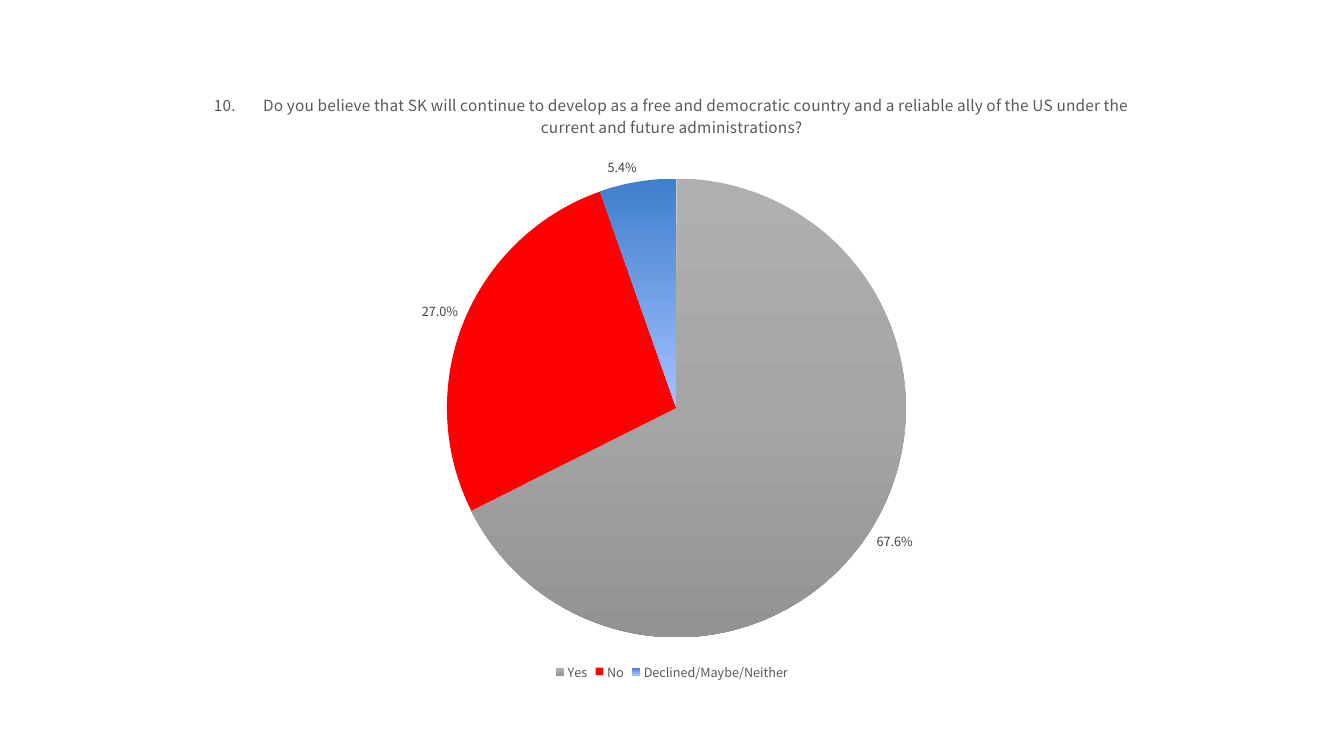
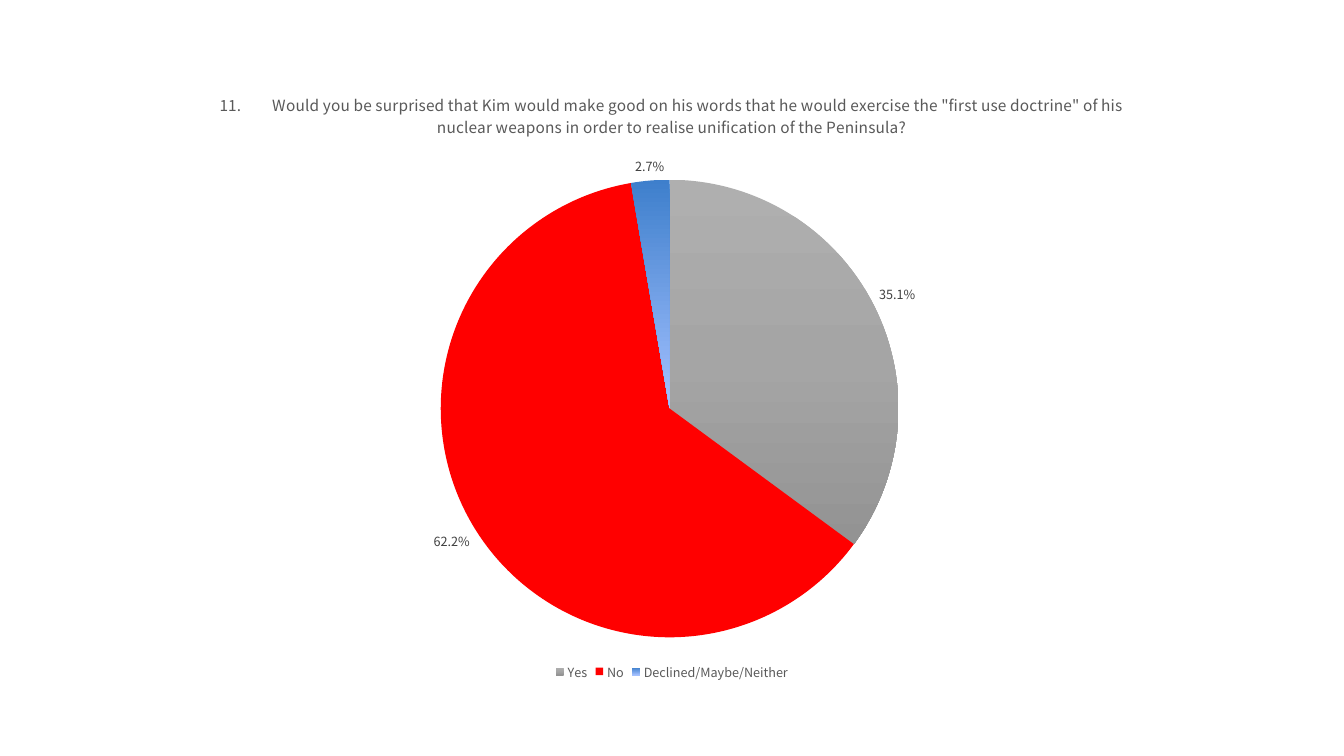
"""Build two survey slides, each with one pie chart."""
from dataclasses import dataclass

from lxml import etree
from pptx import Presentation
from pptx import util as u
from pptx.chart import data as cd
from pptx.dml.color import RGBColor
from pptx.enum import chart as ec
from pptx.oxml import ns

FONT = "Noto Sans CJK KR"
HUES = {"title": "595959", "label": "404040", "base": "000000", "no": "FF0000"}
FADES = {
    0: ("6183CB", "3E70CA", "3062BB"),
    2: ("AFAFAF", "A5A5A5", "939393"),
}
CATS = ("Yes", "No", "Declined/Maybe/Neither")


@dataclass(frozen=True)
class Poll:
    num: str
    ask: str
    gap: float
    vals: tuple[float, ...]


POLLS = (
    Poll(
        "10.",
        "Do you believe that SK will continue to develop as a free and democratic "
        "country and a reliable ally of the US under the current and future "
        "administrations?",
        17,
        (0.676, 0.27, 0.054),
    ),
    Poll(
        "11.",
        'Would you be surprised that Kim would make good on his words that he would '
        'exercise the "first use doctrine" of his nuclear weapons in order to '
        "realise unification of the Peninsula?",
        19.5,
        (0.351, 0.622, 0.027),
    ),
)


def style(font, *, size: float, hue: str) -> None:
    font.name = FONT
    font.size = u.Pt(size)
    font.bold = False
    font.color.rgb = RGBColor.from_string(HUES[hue])


def write(para, text: str, *, size: float, hue: str, track: float = 0) -> None:
    run = para.add_run()
    run.text = text
    style(run.font, size=size, hue=hue)
    if track:
        run.font._element.set("spc", str(int(track * 100)))


def fade(point, stops: tuple[str, ...]) -> None:
    fill = point.format.fill
    fill.gradient()
    fill.gradient_angle = 270
    grad = point._element.find(".//" + ns.qn("a:gradFill"))
    row = grad.find(ns.qn("a:gsLst"))
    for old in list(row):
        row.remove(old)
    for i, hue in enumerate(stops):
        stop = etree.SubElement(row, ns.qn("a:gs"), pos=str(i * 50000))
        etree.SubElement(stop, ns.qn("a:srgbClr"), val=hue)


def paint(plot) -> None:
    points = plot.series[0].points
    for i in range(len(CATS)):
        if i in FADES:
            fade(points[i], FADES[i])
        else:
            points[i].format.fill.solid()
            points[i].format.fill.fore_color.rgb = RGBColor.from_string(HUES["no"])
        points[i].format.line.fill.background()


def draw(slide, poll: Poll) -> None:
    data = cd.CategoryChartData(number_format="0.0%")
    data.categories = CATS
    data.add_series(f"{poll.num} {poll.ask}", poll.vals)
    chart = slide.shapes.add_chart(
        ec.XL_CHART_TYPE.PIE,
        u.Inches(0.7), u.Inches(0.7), u.Inches(11.93), u.Inches(6.09),
        data,
    ).chart
    style(chart.font, size=10, hue="base")

    chart.has_title = True
    chart.chart_title.include_in_layout = False
    para = chart.chart_title.text_frame.paragraphs[0]
    look = {"size": 11, "hue": "title"}
    write(para, poll.num, **look)
    write(para, " ", track=poll.gap, **look)
    write(para, poll.ask, **look)

    chart.has_legend = True
    chart.legend.position = ec.XL_LEGEND_POSITION.BOTTOM
    chart.legend.include_in_layout = False
    style(chart.legend.font, size=9, hue="title")

    plot = chart.plots[0]
    plot.vary_by_categories = True
    paint(plot)
    plot.has_data_labels = True
    tags = plot.data_labels
    tags.show_value = True
    tags.show_percentage = False
    tags.number_format = "0.0%"
    tags.number_format_is_linked = False
    tags.position = ec.XL_LABEL_POSITION.OUTSIDE_END
    style(tags.font, size=9, hue="label")


def main() -> None:
    deck = Presentation()
    deck.slide_width = u.Inches(13.33)
    deck.slide_height = u.Inches(7.5)
    for poll in POLLS:
        draw(deck.slides.add_slide(deck.slide_layouts[6]), poll)
    deck.save("out.pptx")


if __name__ == "__main__":
    main()
